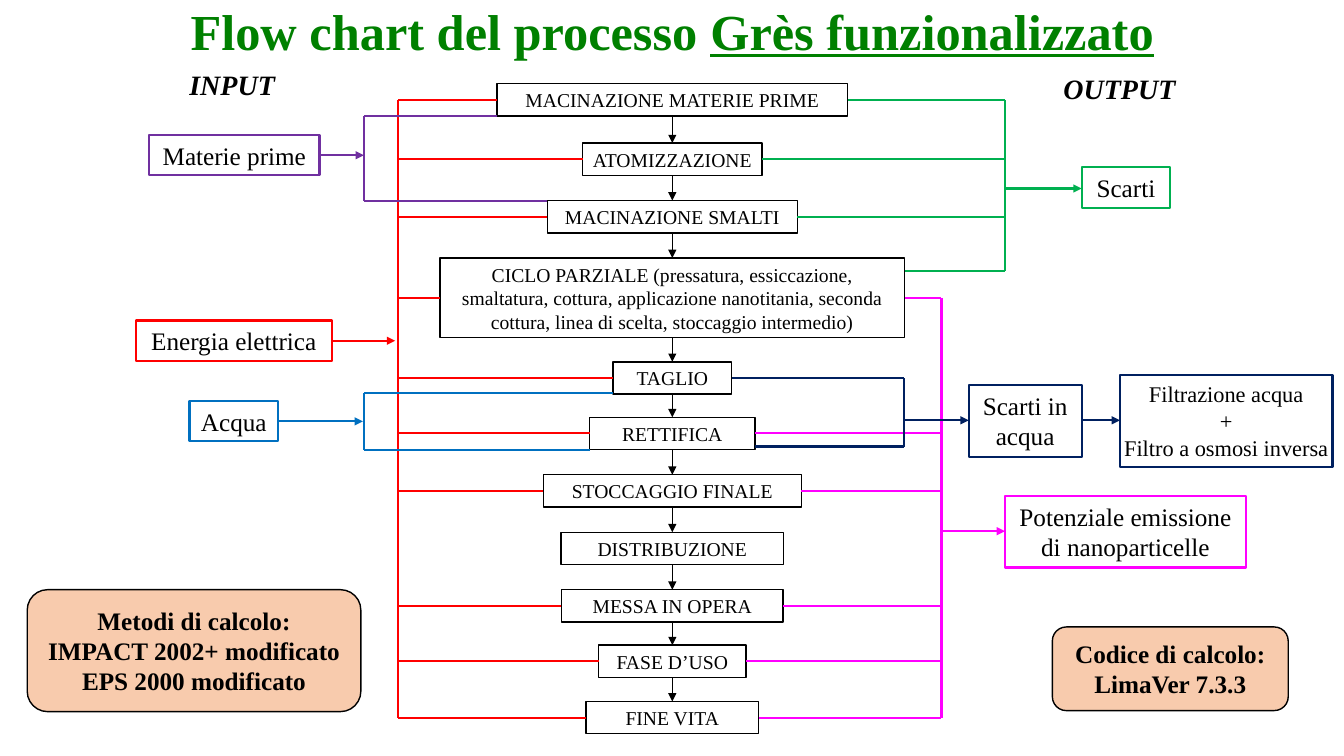
"""Flow chart of the functionalised stoneware process, on a grid of 0.1 inch cells."""
from lxml import etree
from pptx import Presentation
from pptx import util as u
from pptx.dml.color import RGBColor
from pptx.enum import shapes, text
from pptx.oxml.ns import qn

CELL = u.Inches(0.1)
COLS, ROWS = 133.33, 75
MID = 66.7
INK = {
    "black": "000000", "white": "FFFFFF", "title": "008000", "peach": "F8CBAD",
    "red": "FF0000", "pink": "FF00FF", "navy": "002060", "green": "00B050",
    "purple": "7030A0", "blue": "0070C0",
}
STEPS = [
    ("MACINAZIONE MATERIE PRIME", 8.3, 34.8, 3.2),
    ("ATOMIZZAZIONE", 14.2, 17.8, 3.2),
    ("MACINAZIONE SMALTI", 19.9, 24.8, 3.2),
    ("CICLO PARZIALE (pressatura, essiccazione, smaltatura, cottura, "
     "applicazione nanotitania, seconda cottura, linea di scelta, "
     "stoccaggio intermedio)", 25.6, 46.1, 7.9),
    ("TAGLIO", 35.9, 11.8, 3.2),
    ("RETTIFICA", 41.4, 16.4, 3.2),
    ("STOCCAGGIO FINALE", 47.1, 25.6, 3.2),
    ("DISTRIBUZIONE", 52.8, 22.1, 3.2),
    ("MESSA IN OPERA", 58.5, 22, 3.2),
    ("FASE D’USO", 64, 14.6, 3.2),
    ("FINE VITA", 69.6, 17.1, 3.2),
]
GRIND, ATOM, GLAZE, CYCLE, CUT, TRIM, STORE, SHIP, LAY, USE, END = range(len(STEPS))
FLOWS = [
    ("Energia elettrica", "red", (13.5, 31.8, 19.4, 4)),
    ("Potenziale emissione di nanoparticelle", "pink", (99.7, 49.2, 23.9, 7.1)),
    ("Scarti in acqua", "navy", (96.1, 38.2, 11.2, 7.1)),
    ("Scarti", "green", (107.3, 16.6, 8.8, 4)),
    ("Materie prime", "purple", (14.8, 13.4, 16.9, 4)),
    ("Acqua", "blue", (18.8, 39.8, 8.8, 4)),
]
BUSES = [
    ("red", 39.5, -1, [(n, 0) for n in range(len(STEPS)) if n != SHIP]),
    ("pink", 93.4, 1, [(n, 0) for n in (CYCLE, TRIM, STORE, LAY, USE, END)]),
    ("navy", 89.7, 1, [(CUT, 0), (TRIM, 1.3)]),
    ("green", 99.7, 1, [(GRIND, 0), (ATOM, 0), (GLAZE, 0), (CYCLE, -2.7)]),
    ("purple", 36.1, -1, [(GRIND, 1.6), (GLAZE, -1.6)]),
    ("blue", 36.1, -1, [(CUT, 1.5), (TRIM, 1.6)]),
]
LINKS = [
    ("red", 32.9, 39.2, 33.8), ("pink", 93.4, 99.7, 52.7),
    ("navy", 89.7, 96.1, 41.7), ("navy", 107.3, 111.1, 41.7),
    ("green", 99.7, 107.3, 18.7), ("purple", 31.7, 36.1, 15.4),
    ("blue", 27.6, 36, 41.8),
]


def cells(*nums):
    """Turn grid counts into lengths."""
    return [round(n * CELL) for n in nums]


def hue(name):
    """Look up a colour."""
    return RGBColor.from_string(INK[name])


def put(item, look):
    """Set each attribute of a format dict."""
    for key, val in look.items():
        setattr(item, key, val)


def style(run, size, tone="black", **look):
    """Format one run."""
    put(run.font, {"name": "Times New Roman", "size": u.Pt(size), **look})
    run.font.color.rgb = hue(tone)


def write(item, lines, size, side=1, end=0.5, align=text.PP_ALIGN.CENTER,
          anchor=text.MSO_ANCHOR.MIDDLE, **look):
    """Fill a shape with formatted lines."""
    frame = item.text_frame
    left, top = cells(side, end)
    put(frame, {"word_wrap": True, "vertical_anchor": anchor,
                "margin_left": left, "margin_right": left,
                "margin_top": top, "margin_bottom": top})
    for num, line in enumerate(lines):
        para = frame.add_paragraph() if num else frame.paragraphs[0]
        para.alignment = align
        run = para.add_run()
        run.text = line
        style(run, size, **look)


def box(slide, area, lines, edge="black", fill=None, size=18, width=1.5,
        kind=shapes.MSO_SHAPE.RECTANGLE, **look):
    """Draw an outlined box with text."""
    item = slide.shapes.add_shape(kind, *cells(*area))
    item.shadow.inherit = False
    if fill:
        item.fill.solid()
        item.fill.fore_color.rgb = hue(fill)
    else:
        item.fill.background()
    item.line.color.rgb = hue(edge)
    item.line.width = u.Pt(width)
    write(item, lines, size, **look)


def wire(slide, ends, tone, width=1.5, arrow=False):
    """Draw a straight line, with or without an arrowhead."""
    item = slide.shapes.add_connector(shapes.MSO_CONNECTOR.STRAIGHT, *cells(*ends))
    item.line.color.rgb = hue(tone)
    item.line.width = u.Pt(width)
    if arrow:
        etree.SubElement(item.line._get_or_add_ln(), qn("a:tailEnd"), type="triangle")
    etree.SubElement(item._element.spPr, qn("a:effectLst"))


def chain(slide):
    """Draw the process steps and the arrows between them."""
    for name, top, wide, high in STEPS:
        box(slide, (MID - wide / 2, top, wide, high), [name], fill="white",
            size=14, width=1, side=0.6, end=0.4)
    for (_, top, _, high), (_, low, _, _) in zip(STEPS, STEPS[1:]):
        wire(slide, (MID, top + high, MID, low), "black", 0.5, True)


def bus(slide, tone, trunk, side, stops):
    """Join a vertical trunk to the edges of its steps."""
    levels = []
    for num, shift in stops:
        _, top, wide, high = STEPS[num]
        level = top + high / 2 + shift
        levels.append(level)
        wire(slide, (MID + side * wide / 2, level, trunk, level), tone)
    wire(slide, (trunk, min(levels), trunk, max(levels)), tone)


def head(slide):
    """Fill the title placeholder."""
    title = slide.shapes.title
    put(title, dict(zip(("left", "top", "width", "height"), cells(9.2, -0.2, 115, 7.1))))
    put(title.text_frame, {"auto_size": text.MSO_AUTO_SIZE.NONE, "word_wrap": True,
                           "vertical_anchor": text.MSO_ANCHOR.MIDDLE})
    para = title.text_frame.paragraphs[0]
    put(para, {"alignment": text.PP_ALIGN.CENTER, "line_spacing": 0.9})
    for words, line in (("Flow chart del processo ", False), ("Grès funzionalizzato", True)):
        run = para.add_run()
        run.text = words
        style(run, 36, "title", bold=True, underline=line)


def main():
    """Build and save the slide."""
    deck = Presentation()
    deck.slide_width, deck.slide_height = cells(COLS, ROWS)
    slide = deck.slides.add_slide(deck.slide_layouts[5])
    head(slide)
    for area, lines in (
        ((2.7, 58.5, 33.1, 12.1),
         ["Metodi di calcolo:", "IMPACT 2002+ modificato", "EPS 2000 modificato"]),
        ((104.4, 62.2, 23.4, 8.3), ["Codice di calcolo:", "LimaVer 7.3.3"]),
    ):
        box(slide, area, lines, fill="peach", width=1,
            kind=shapes.MSO_SHAPE.ROUNDED_RECTANGLE, bold=True)
    chain(slide)
    for word, area in (("INPUT", (17.8, 6.2, 10.9, 4.4)),
                       ("OUTPUT", (104.5, 6.6, 14.1, 4.4))):
        write(slide.shapes.add_textbox(*cells(*area)), [word], 20,
              align=text.PP_ALIGN.LEFT, anchor=text.MSO_ANCHOR.TOP,
              bold=True, italic=True)
    for name, tone, area in FLOWS:
        box(slide, area, [name], tone, anchor=text.MSO_ANCHOR.TOP)
    box(slide, (111.1, 37.2, 21.1, 9.1),
        ["Filtrazione acqua", "+", "Filtro a osmosi inversa"], "navy",
        size=16, side=0, anchor=text.MSO_ANCHOR.TOP)
    for line in BUSES:
        bus(slide, *line)
    for tone, start, stop, level in LINKS:
        wire(slide, (start, level, stop, level), tone, arrow=True)
    deck.save("out.pptx")


if __name__ == "__main__":
    main()
